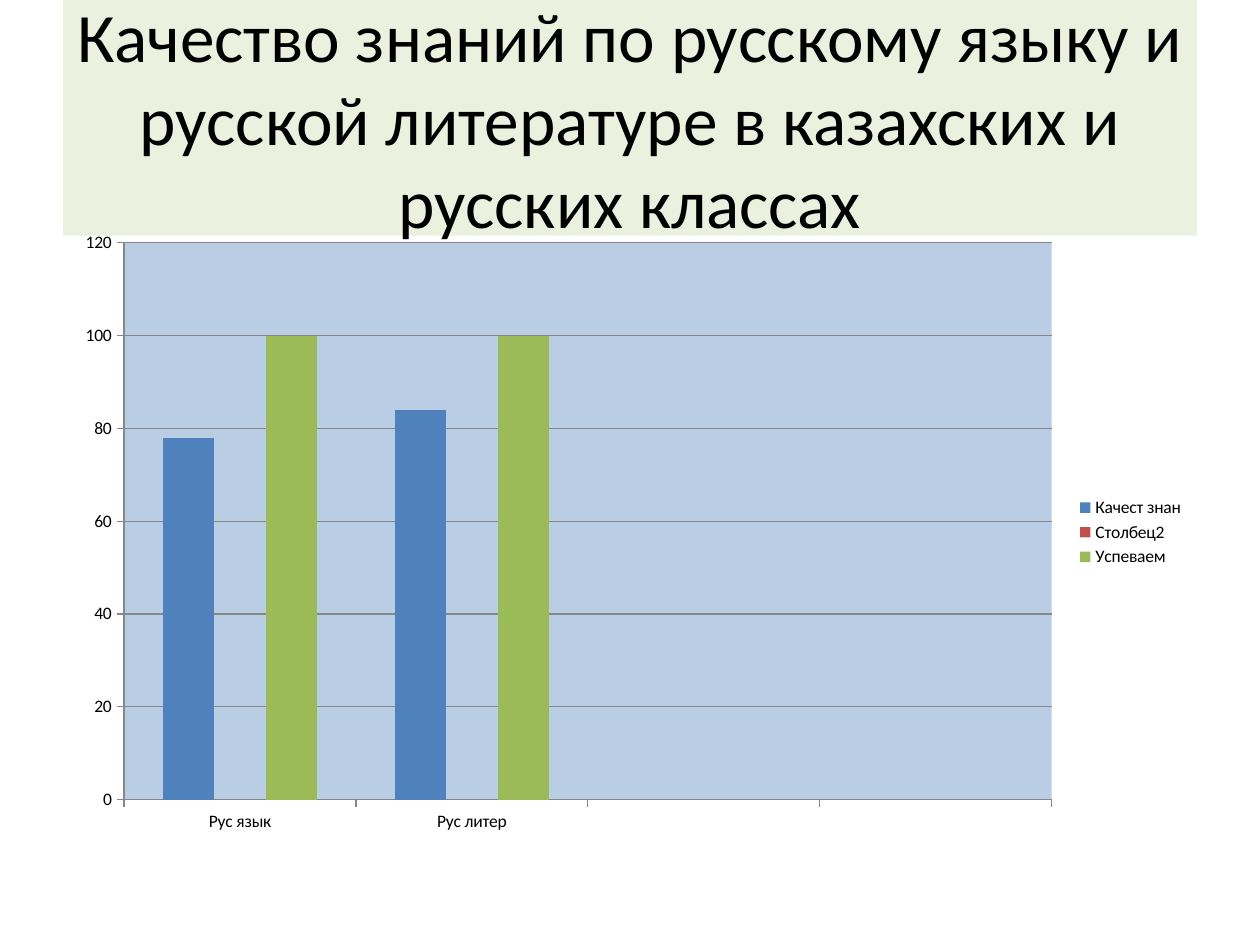
import pptx
import pptx.chart.data
import pptx.dml.color
import pptx.enum.chart
import pptx.enum.text
import pptx.oxml
import pptx.util
from pptx.util import Inches


def color(value):
    return pptx.dml.color.RGBColor.from_string(value)


def write(tf, text, size, font="Calibri", fill="000000", align=pptx.enum.text.PP_ALIGN.CENTER):
    p = tf.paragraphs[0]
    p.alignment = align
    r = p.add_run()
    r.text = text
    r.font.size = pptx.util.Pt(size)
    r.font.name = font
    r.font.color.rgb = color(fill)


prs = pptx.Presentation()
prs.slide_width, prs.slide_height = Inches(10), Inches(7.5)
s = prs.slides.add_slide(prs.slide_layouts[5])

# Title
title = s.shapes.title
title.left, title.top = Inches(0.5), Inches(0)
title.width, title.height = Inches(9), Inches(1.87)
title.fill.solid()
title.fill.fore_color.rgb = color("EBF1DE")
tf = title.text_frame
tf.word_wrap = True
tf.auto_size = pptx.enum.text.MSO_AUTO_SIZE.NONE
tf.vertical_anchor = pptx.enum.text.MSO_ANCHOR.MIDDLE
write(tf, "Качество знаний по русскому языку и русской литературе в казахских и русских классах", 39.6)

# Chart data: the last two categories are empty
series = [
    ("Качест знан", (78, 84, None, None), "4F81BD"),
    ("Столбец2", (None,) * 4, "C0504D"),
    ("Успеваем", (100, 100, None, None), "9BBB59"),
]
data = pptx.chart.data.CategoryChartData()
data.categories = ["Рус язык", "Рус литер", "", ""]
for name, values, _ in series:
    data.add_series(name, values)

# Column chart
chart = s.shapes.add_chart(
    pptx.enum.chart.XL_CHART_TYPE.COLUMN_CLUSTERED,
    Inches(0.5), Inches(1.75), Inches(9), Inches(4.95), data,
).chart
chart.has_title = False
chart.font.size = pptx.util.Pt(10)
chart.font.name = "Calibri"
chart.font.color.rgb = color("000000")
plot = chart.plots[0]
plot.vary_by_categories = False
plot.gap_width = 150
for ser, (_, _, fill) in zip(plot.series, series):
    ser.format.fill.solid()
    ser.format.fill.fore_color.rgb = color(fill)

# Axes and gridlines
value_axis = chart.value_axis
value_axis.minimum_scale, value_axis.maximum_scale = 0, 120
value_axis.major_unit = 20
value_axis.has_major_gridlines = True
for part in (value_axis, chart.category_axis, value_axis.major_gridlines):
    part.format.line.color.rgb = color("878787")
    part.format.line.width = pptx.util.Pt(0.75)

# Legend
chart.has_legend = True
chart.legend.position = pptx.enum.chart.XL_LEGEND_POSITION.RIGHT
chart.legend.include_in_layout = False

# Plot area fill
plot_area = chart.element.find(".//" + pptx.oxml.ns.qn("c:plotArea"))
plot_area.append(pptx.oxml.parse_xml(
    f'<c:spPr {pptx.oxml.ns.nsdecls("c", "a")}>'
    '<a:solidFill><a:srgbClr val="B9CDE5"/></a:solidFill></c:spPr>'
))

prs.save("out.pptx")
